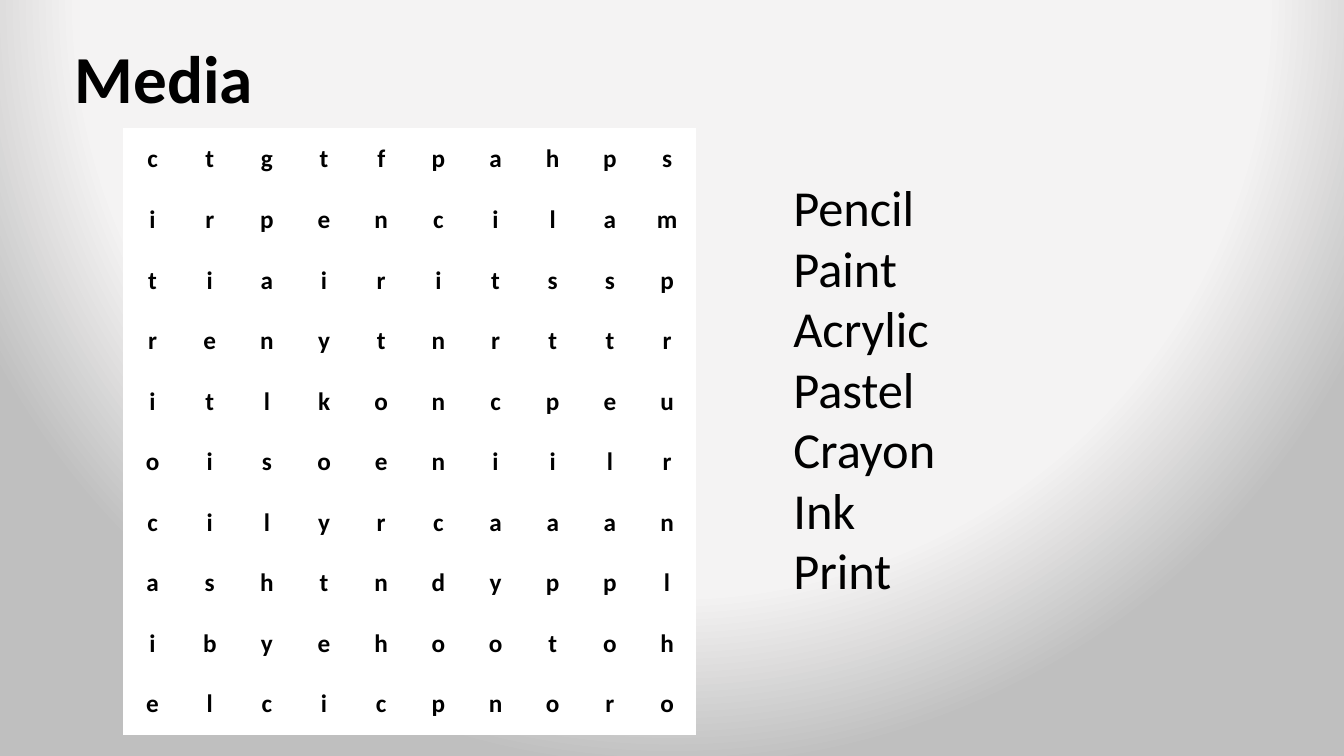
import pptx
import pptx.dml.color
import pptx.enum.text
import pptx.oxml
import pptx.oxml.ns
import pptx.util
from dataclasses import dataclass

TITLE = "Media"
LETTER_ROWS = [
    "ctgtfpahps",
    "irpencilam",
    "tiairitssp",
    "renytnrttr",
    "itlkoncpeu",
    "oisoeniilr",
    "cilyrcaaan",
    "ashtndyppl",
    "ibyehootoh",
    "elcicpnoro",
]
WORDS = ["Pencil", "Paint", "Acrylic", "Pastel", "Crayon", "Ink", "Print"]


@dataclass(frozen=True)
class Theme:
    font: str = "Calibri"
    ink: str = "000000"
    paper: str = "FFFFFF"
    glow: str = "F4F3F3"
    edge: str = "BFBFBF"
    title_size: int = 48
    word_size: int = 36
    letter_size: int = 18


THEME = Theme()
SLIDE_W, SLIDE_H = 13.33, 7.5
TITLE_BOX = (0.64, 0.09, 11.5, 1.45)
GRID_LEFT, GRID_TOP = 1.23, 1.28
GRID_W, GRID_H = 5.67, 6.01
WORD_BOX = (7.77, 1.7, 3.39, 4.34)
GLOW_STOPS = [(0, THEME.glow), (40, THEME.glow), (77, THEME.glow), (100, THEME.edge)]


def inches(*lengths):
    return [pptx.util.Inches(length) for length in lengths]


def write(frame, lines, size, bold=False, align=pptx.enum.text.PP_ALIGN.LEFT,
          anchor=pptx.enum.text.MSO_ANCHOR.TOP, spacing=None):
    frame.word_wrap = True
    frame.vertical_anchor = anchor
    for index, line in enumerate(lines):
        paragraph = frame.paragraphs[0] if index == 0 else frame.add_paragraph()
        paragraph.alignment = align
        paragraph.line_spacing = spacing
        run = paragraph.add_run()
        run.text = line
        run.font.name = THEME.font
        run.font.size = pptx.util.Pt(size)
        run.font.bold = bold
        run.font.color.rgb = pptx.dml.color.RGBColor.from_string(THEME.ink)


def paint_background(slide):
    """Fill the slide with a circular glow centred above its top edge."""
    slide.background.fill.solid()
    stops = "".join(
        f'<a:gs pos="{percent * 1000}"><a:srgbClr val="{color}"/></a:gs>'
        for percent, color in GLOW_STOPS)
    glow = pptx.oxml.parse_xml(
        f'<a:gradFill {pptx.oxml.ns.nsdecls("a")} rotWithShape="1">'
        f'<a:gsLst>{stops}</a:gsLst><a:path path="circle">'
        '<a:fillToRect l="10000" t="-25000" r="10000" b="125000"/>'
        '</a:path></a:gradFill>')
    solid = next(slide.element.iter(pptx.oxml.ns.qn("a:solidFill")))
    solid.getparent().replace(solid, glow)


def add_letter_grid(slide):
    row_count, column_count = len(LETTER_ROWS), len(LETTER_ROWS[0])
    grid = slide.shapes.add_table(
        row_count, column_count,
        *inches(GRID_LEFT, GRID_TOP, GRID_W, GRID_H)).table
    grid.first_row = grid.horz_banding = False
    for row, letters in enumerate(LETTER_ROWS):
        for column, letter in enumerate(letters):
            cell = grid.cell(row, column)
            cell.fill.solid()
            cell.fill.fore_color.rgb = pptx.dml.color.RGBColor.from_string(THEME.paper)
            cell.margin_left = cell.margin_right = 0
            cell.margin_top = cell.margin_bottom = 0
            write(cell.text_frame, [letter], THEME.letter_size, bold=True,
                  align=pptx.enum.text.PP_ALIGN.CENTER)
            cell.vertical_anchor = pptx.enum.text.MSO_ANCHOR.MIDDLE


def main():
    deck = pptx.Presentation()
    deck.slide_width, deck.slide_height = inches(SLIDE_W, SLIDE_H)
    slide = deck.slides.add_slide(deck.slide_layouts.get_by_name("Title Only"))
    paint_background(slide)

    title = slide.shapes.title
    title.left, title.top, title.width, title.height = inches(*TITLE_BOX)
    write(title.text_frame, [TITLE], THEME.title_size, bold=True,
          anchor=pptx.enum.text.MSO_ANCHOR.MIDDLE, spacing=0.9)

    add_letter_grid(slide)

    word_list = slide.shapes.add_textbox(*inches(*WORD_BOX)).text_frame
    write(word_list, WORDS, THEME.word_size)
    word_list.auto_size = pptx.enum.text.MSO_AUTO_SIZE.SHAPE_TO_FIT_TEXT

    deck.save("out.pptx")


if __name__ == "__main__":
    main()
